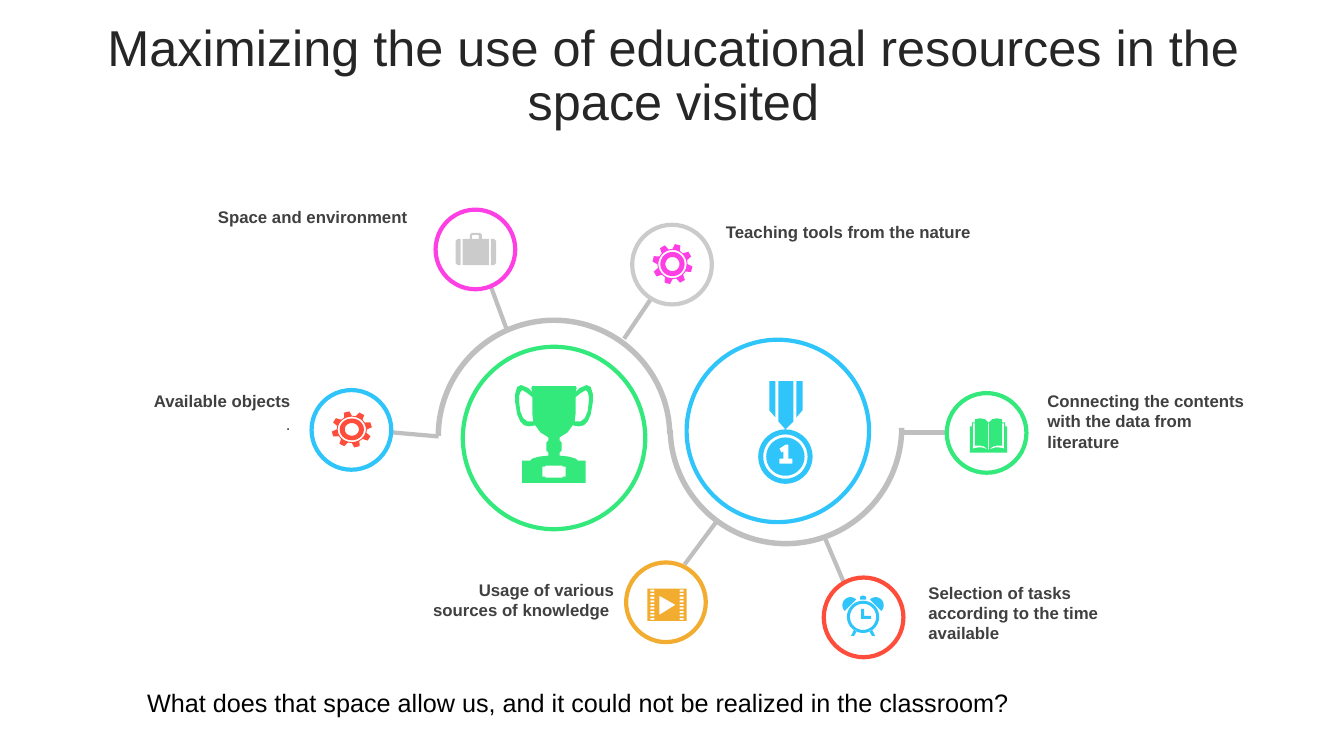
from math import cos, radians, sin

from lxml import etree
from pptx import Presentation
from pptx.dml.color import RGBColor
from pptx.enum.shapes import MSO_CONNECTOR, MSO_SHAPE
from pptx.enum.text import MSO_ANCHOR, MSO_AUTO_SIZE, PP_ALIGN
from pptx.oxml.ns import qn
from pptx.util import Inches, Pt

WHITE = RGBColor(0xFF, 0xFF, 0xFF)
BLACK = RGBColor(0x00, 0x00, 0x00)
TITLE_GREY = RGBColor(0x26, 0x26, 0x26)
LABEL_GREY = RGBColor(0x40, 0x40, 0x40)
TRACK_GREY = RGBColor(0xBF, 0xBF, 0xBF)
LIGHT_GREY = RGBColor(0xCB, 0xCB, 0xCB)
GREEN = RGBColor(0x33, 0xE9, 0x7C)
BLUE = RGBColor(0x2F, 0xC5, 0xFA)
RED = RGBColor(0xFE, 0x4D, 0x3B)
ORANGE = RGBColor(0xF2, 0xAC, 0x30)
PINK = RGBColor(0xFE, 0x3F, 0xE4)
LEFT, CENTER, RIGHT = PP_ALIGN.LEFT, PP_ALIGN.CENTER, PP_ALIGN.RIGHT

presentation = Presentation()
presentation.slide_width = Inches(13.33)
presentation.slide_height = Inches(7.5)
slide = presentation.slides.add_slide(presentation.slide_layouts[6])
shapes = slide.shapes


def arc(x, y, radius, start=0, end=360, squash=1):
    """Points along an arc, clockwise in degrees; squash scales its height."""
    angles = [radians(start + (end - start) * i / 36) for i in range(37)]
    return [(x + radius * cos(a), y + radius * squash * sin(a)) for a in angles]


def add_icon(colour, contours, axis=0, sides=(), halves=()):
    """One even-odd freeform; sides are repeated and halves completed across axis."""
    contours = list(contours)
    for side in sides:
        contours += [side, [(2 * axis - x, y) for x, y in side]]
    for half in halves:
        contours.append(half + [(2 * axis - x, y) for x, y in reversed(half)])
    builder = None
    for contour in contours:
        points = [(Inches(x), Inches(y)) for x, y in contour]
        if builder is None:
            builder = shapes.build_freeform(*points[0], scale=1.0)
        else:
            builder.move_to(*points[0])
        builder.add_line_segments(points[1:], close=True)
    icon = builder.convert_to_shape()
    icon.shadow.inherit = False
    icon.fill.solid()
    icon.fill.fore_color.rgb = colour
    icon.line.fill.background()


# Track arcs
for left, top, rotation in [(6.62, 3.07, 180), (4.32, 3.15, 0)]:
    track = shapes.add_shape(MSO_SHAPE.BLOCK_ARC, Inches(left), Inches(top), Inches(2.35), Inches(2.35))
    track.rotation = rotation
    for i, value in enumerate((108, 215.354, 0.023)):
        track.adjustments[i] = value
    track.shadow.inherit = False
    track.fill.solid()
    track.fill.fore_color.rgb = TRACK_GREY
    track.line.fill.background()

# Spokes from the track to the small circles
for x1, y1, x2, y2 in [
    (8.95, 4.29, 9.39, 4.29), (8.17, 5.31, 8.37, 5.78), (7.11, 5.17, 6.79, 5.6),
    (4.35, 4.33, 3.89, 4.29), (5.03, 3.28, 4.86, 2.82), (6.19, 3.36, 6.46, 2.96),
]:
    spoke = shapes.add_connector(MSO_CONNECTOR.STRAIGHT, Inches(x1), Inches(y1), Inches(x2), Inches(y2))
    spoke.line.color.rgb = TRACK_GREY
    spoke.line.width = Pt(3)
    etree.SubElement(spoke._element.spPr, qn("a:effectLst"))

# Circles
for left, top, size, colour in [
    (4.59, 3.44, 1.81, GREEN), (6.81, 3.37, 1.81, BLUE),
    (9.39, 3.9, 0.79, GREEN), (8.17, 5.73, 0.79, RED), (6.21, 5.58, 0.79, ORANGE),
    (3.09, 3.87, 0.79, BLUE), (4.32, 2.08, 0.79, PINK), (6.27, 2.23, 0.79, LIGHT_GREY),
]:
    circle = shapes.add_shape(MSO_SHAPE.OVAL, Inches(left), Inches(top), Inches(size), Inches(size))
    circle.shadow.inherit = False
    circle.fill.solid()
    circle.fill.fore_color.rgb = WHITE
    circle.line.color.rgb = colour
    circle.line.width = Pt(3)

# Gears
for x, y, squash, phase, colour in [(6.67, 2.62, 1, 15, PINK), (3.49, 4.26, 0.9, -15, RED)]:
    teeth = []
    for tooth in range(8):
        for offset, radius in [(-15, 0.15), (-8, 0.2), (8, 0.2), (15, 0.15)]:
            angle = radians(phase + 45 * tooth + offset)
            teeth.append((x + radius * cos(angle), y + radius * squash * sin(angle)))
    add_icon(colour, [teeth] + [arc(x, y, radius, squash=squash) for radius in (0.14, 0.12, 0.07)])

# Alarm clock
add_icon(
    BLUE,
    [
        arc(8.56, 6.12, 0.16), arc(8.56, 6.12, 0.13),
        [(8.54, 6.04), (8.57, 6.04), (8.57, 6.11), (8.64, 6.11), (8.64, 6.14), (8.54, 6.14)],
        [(8.53, 5.95), (8.53, 5.92), (8.55, 5.91), (8.57, 5.91), (8.59, 5.92), (8.59, 5.95)],
    ],
    axis=8.56,
    sides=[arc(8.435, 6.005, 0.08, 135, 315), [(8.47, 6.25), (8.5, 6.26), (8.47, 6.31), (8.44, 6.31)]],
)

# Film strip
perforations = []
for row in range(9):
    y = 5.85 + 0.035 * row
    perforations.append([(6.45, y), (6.49, y), (6.49, y + 0.02), (6.45, y + 0.02)])
add_icon(
    ORANGE,
    [[(6.42, 5.84), (6.81, 5.84), (6.81, 6.16), (6.42, 6.16)], [(6.54, 5.91), (6.54, 6.1), (6.7, 6)]],
    axis=6.615,
    sides=perforations,
)

# Suitcase
add_icon(
    LIGHT_GREY,
    [[(4.68, 2.37), (4.68, 2.34), (4.69, 2.33), (4.74, 2.33), (4.75, 2.34), (4.75, 2.37)]],
    axis=4.72,
    sides=[[(4.57, 2.37), (4.57, 2.63), (4.54, 2.63), (4.52, 2.61), (4.52, 2.39), (4.54, 2.37)]],
    halves=[[(4.68, 2.31), (4.66, 2.33), (4.66, 2.37), (4.59, 2.37), (4.59, 2.63)]],
)

# Open book
add_icon(
    GREEN,
    [[(9.8, 4.2), (9.81, 4.2), (9.81, 4.46), (9.8, 4.46)]],
    axis=9.805,
    sides=[[(9.65, 4.2), (9.67, 4.2), (9.67, 4.42), (9.72, 4.42), (9.76, 4.43), (9.8, 4.46),
            (9.74, 4.44), (9.7, 4.44), (9.65, 4.45)]],
    halves=[[(9.8, 4.19), (9.77, 4.16), (9.72, 4.15), (9.67, 4.16), (9.67, 4.19), (9.64, 4.19),
             (9.64, 4.23), (9.62, 4.23), (9.62, 4.49)]],
)

# Medal
add_icon(
    BLUE,
    [arc(7.79, 4.53, radius) for radius in (0.27, 0.22, 0.19)] + [
        [(7.79, 4.41), (7.82, 4.41), (7.82, 4.55), (7.86, 4.55), (7.86, 4.6), (7.73, 4.6),
         (7.73, 4.55), (7.77, 4.55), (7.77, 4.48), (7.75, 4.49), (7.73, 4.45)],
        [(7.72, 3.78), (7.87, 3.78), (7.87, 4.18), (7.79, 4.26), (7.72, 4.18)],
    ],
    axis=7.795,
    sides=[[(7.63, 3.78), (7.69, 3.78), (7.69, 4.14), (7.63, 4.07)]],
)

# Trophy
add_icon(
    GREEN,
    [],
    axis=5.495,
    sides=[[(5.28, 3.94), (5.23, 3.9), (5.18, 3.87), (5.16, 3.89), (5.15, 3.93), (5.15, 3.99),
            (5.16, 4.08), (5.19, 4.15), (5.23, 4.18), (5.29, 4.18), (5.28, 4.1)]],
    halves=[
        [(5.28, 3.83), (5.27, 3.85), (5.28, 3.89), (5.24, 3.85), (5.17, 3.82), (5.13, 3.84),
         (5.11, 3.91), (5.11, 3.99), (5.13, 4.11), (5.16, 4.18), (5.2, 4.22), (5.25, 4.23),
         (5.31, 4.22), (5.36, 4.29), (5.44, 4.34), (5.44, 4.37), (5.42, 4.39), (5.42, 4.47),
         (5.44, 4.49), (5.44, 4.52), (5.35, 4.53), (5.28, 4.55), (5.26, 4.57), (5.18, 4.57),
         (5.18, 4.79)],
        [(5.41, 4.62), (5.41, 4.63), (5.38, 4.63), (5.38, 4.73), (5.41, 4.73), (5.41, 4.74)],
    ],
)

# Title, labels and closing question
title = "Maximizing the use of educational resources in the space visited"
question = "What does that space allow us, and it could not be realized in the classroom?"
for text, left, top, width, height, align, size, bold, colour in [
    (title, 0.35, 0.37, 12.66, 0.79, CENTER, 36, False, TITLE_GREY),
    ("Available objects", 0.35, 3.83, 2.63, 0.3, RIGHT, 12, True, LABEL_GREY),
    (".", 0.35, 4.06, 2.63, 0.3, RIGHT, 12, False, LABEL_GREY),
    ("Space and environment", 1.97, 2, 2.17, 0.3, RIGHT, 12, True, LABEL_GREY),
    ("Teaching tools from the nature", 7.1, 2.15, 2.81, 0.3, LEFT, 12, True, LABEL_GREY),
    ("Connecting the contents with the data from literature", 10.29, 3.83, 2.17, 0.71, LEFT, 12, True, LABEL_GREY),
    ("Selection of tasks according to the time available", 9.11, 5.73, 2.16, 0.71, LEFT, 12, True, LABEL_GREY),
    ("Usage of various sources of knowledge ", 4.02, 5.7, 2.17, 0.5, RIGHT, 12, True, LABEL_GREY),
    (question, 1.36, 6.77, 11.65, 0.4, LEFT, 18, False, BLACK),
]:
    box = shapes.add_textbox(Inches(left), Inches(top), Inches(width), Inches(height))
    frame = box.text_frame
    frame.word_wrap = True
    frame.text = text
    paragraph = frame.paragraphs[0]
    paragraph.alignment = align
    paragraph.font.name = "Arial"
    paragraph.font.size = Pt(size)
    paragraph.font.bold = bold
    paragraph.font.color.rgb = colour
    if text == title:
        frame.vertical_anchor = MSO_ANCHOR.MIDDLE
        paragraph.line_spacing = 0.9
        paragraph.space_before = Pt(10)
    else:
        frame.auto_size = MSO_AUTO_SIZE.SHAPE_TO_FIT_TEXT

presentation.save("out.pptx")
